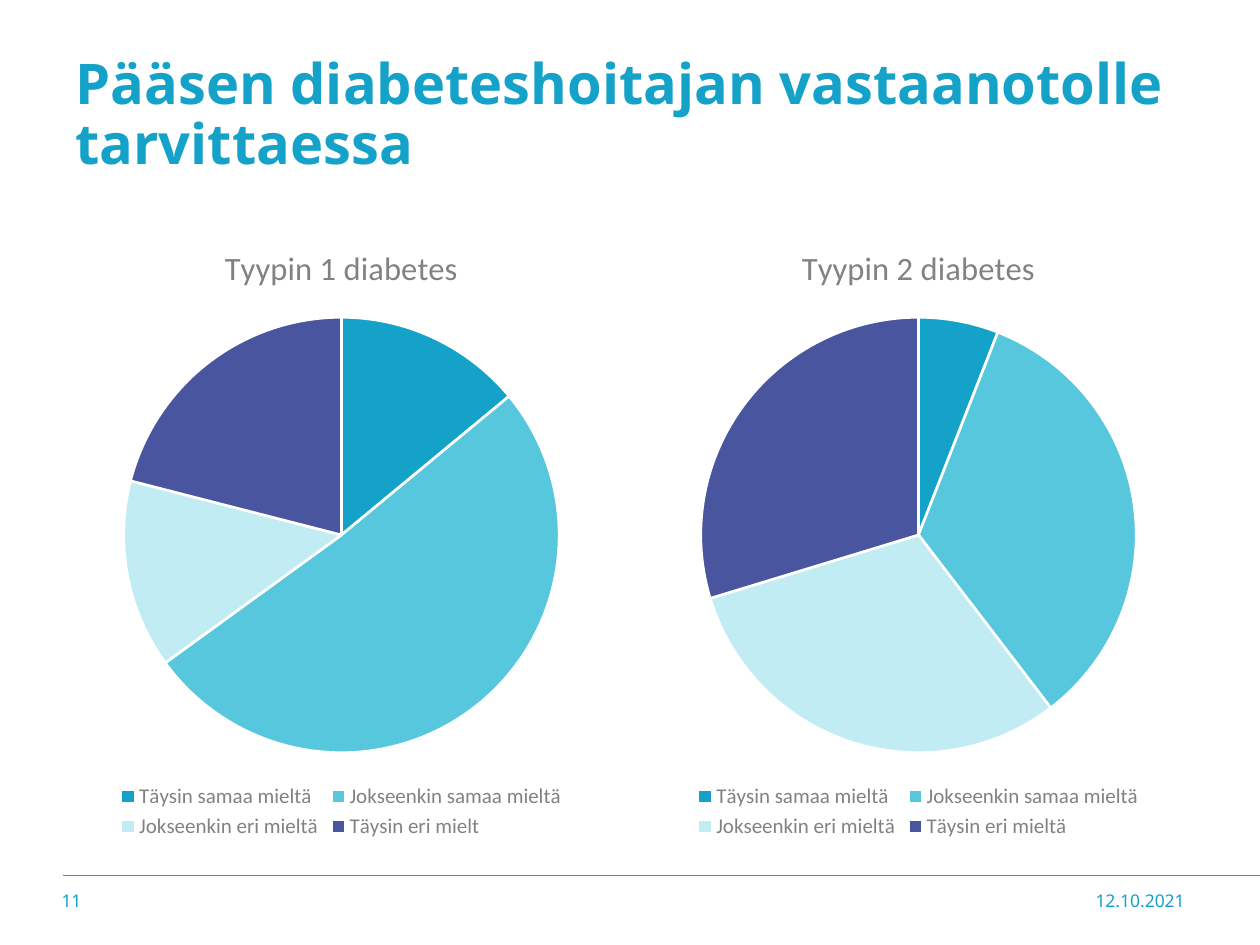
from lxml import etree
from pptx import Presentation
from pptx import util as u
from pptx.chart import data
from pptx.dml.color import RGBColor
from pptx.enum import chart as charts, shapes, text
from pptx.oxml.ns import qn

COLORS = {
    "blue": "14A2C9",
    "rule": "0FA1C9",
    "cyan": "57C7DE",
    "pale": "C2ECF4",
    "violet": "49559F",
    "grey": "828282",
    "dark": "3F3F3F",
    "white": "FFFFFF",
}
SLICES = ["blue", "cyan", "pale", "violet"]
ANSWERS = ["Täysin samaa mieltä", "Jokseenkin samaa mieltä", "Jokseenkin eri mieltä"]
PIES = [
    ("Tyypin 1 diabetes", "Täysin eri mielt", (14, 51, 14, 21)),
    ("Tyypin 2 diabetes", "Täysin eri mieltä", (6, 34, 31, 30)),
]
CHART_LEFT, CHART_STEP = 0.5, 4.58


def color(name):
    return RGBColor.from_string(COLORS[name])


def style_font(font, color_name, **values):
    for name, value in values.items():
        setattr(font, name, value)
    font.color.rgb = color(color_name)


def add_text(page, wording, area, size, bold=False, align=None, spacing=None):
    box = page.shapes.add_textbox(*map(u.Inches, area))
    frame = box.text_frame
    frame.word_wrap = True
    frame.vertical_anchor = text.MSO_ANCHOR.MIDDLE
    para = frame.paragraphs[0]
    for name, value in {"alignment": align, "line_spacing": spacing}.items():
        setattr(para, name, value)
    span = para.add_run()
    span.text = wording
    style_font(span.font, "blue", name="Noto Sans", size=u.Pt(size), bold=bold)


def add_rule(page):
    rule = page.shapes.add_connector(
        shapes.MSO_CONNECTOR.STRAIGHT,
        u.Inches(0.5), u.Inches(6.95), u.Inches(10), u.Inches(6.95),
    )
    rule.line.color.rgb = color("rule")
    rule.line.width = u.Pt(0.25)
    etree.SubElement(rule._element.spPr, qn("a:effectLst"))


def add_pie(page, left, title, last_answer, values):
    table = data.CategoryChartData()
    table.categories = ANSWERS + [last_answer]
    table.add_series(title, values)
    chart = page.shapes.add_chart(
        charts.XL_CHART_TYPE.PIE,
        u.Inches(left), u.Inches(1.75), u.Inches(4.42), u.Inches(4.95), table,
    ).chart
    style_font(chart.font, "dark", name="Calibri", size=u.Pt(10))

    chart.has_title = True
    para = chart.chart_title.text_frame.paragraphs[0]
    span = para.add_run()
    span.text = title
    style_font(span.font, "grey", name="Calibri", size=u.Pt(18.6), bold=False)

    chart.has_legend = True
    chart.legend.position = charts.XL_LEGEND_POSITION.BOTTOM
    chart.legend.include_in_layout = False
    style_font(chart.legend.font, "grey", name="Calibri", size=u.Pt(12))

    plot = chart.plots[0]
    plot.vary_by_categories = True
    for index, name in enumerate(SLICES):
        form = plot.series[0].points[index].format
        form.fill.solid()
        form.fill.fore_color.rgb = color(name)
        form.line.color.rgb = color("white")
        form.line.width = u.Pt(1.5)


def main():
    deck = Presentation()
    deck.slide_width, deck.slide_height = u.Inches(10), u.Inches(7.5)
    page = deck.slides.add_slide(deck.slide_layouts[6])
    add_rule(page)
    add_text(page, "Pääsen diabeteshoitajan vastaanotolle tarvittaessa",
             (0.5, 0.3, 9, 1.25), 32, bold=True, spacing=0.9)
    for index, pie in enumerate(PIES):
        add_pie(page, CHART_LEFT + index * CHART_STEP, *pie)
    add_text(page, "12.10.2021", (8.28, 6.95, 1.22, 0.4), 10, align=text.PP_ALIGN.RIGHT)
    add_text(page, "11", (0.39, 6.95, 0.74, 0.4), 10)
    deck.save("out.pptx")


if __name__ == "__main__":
    main()
